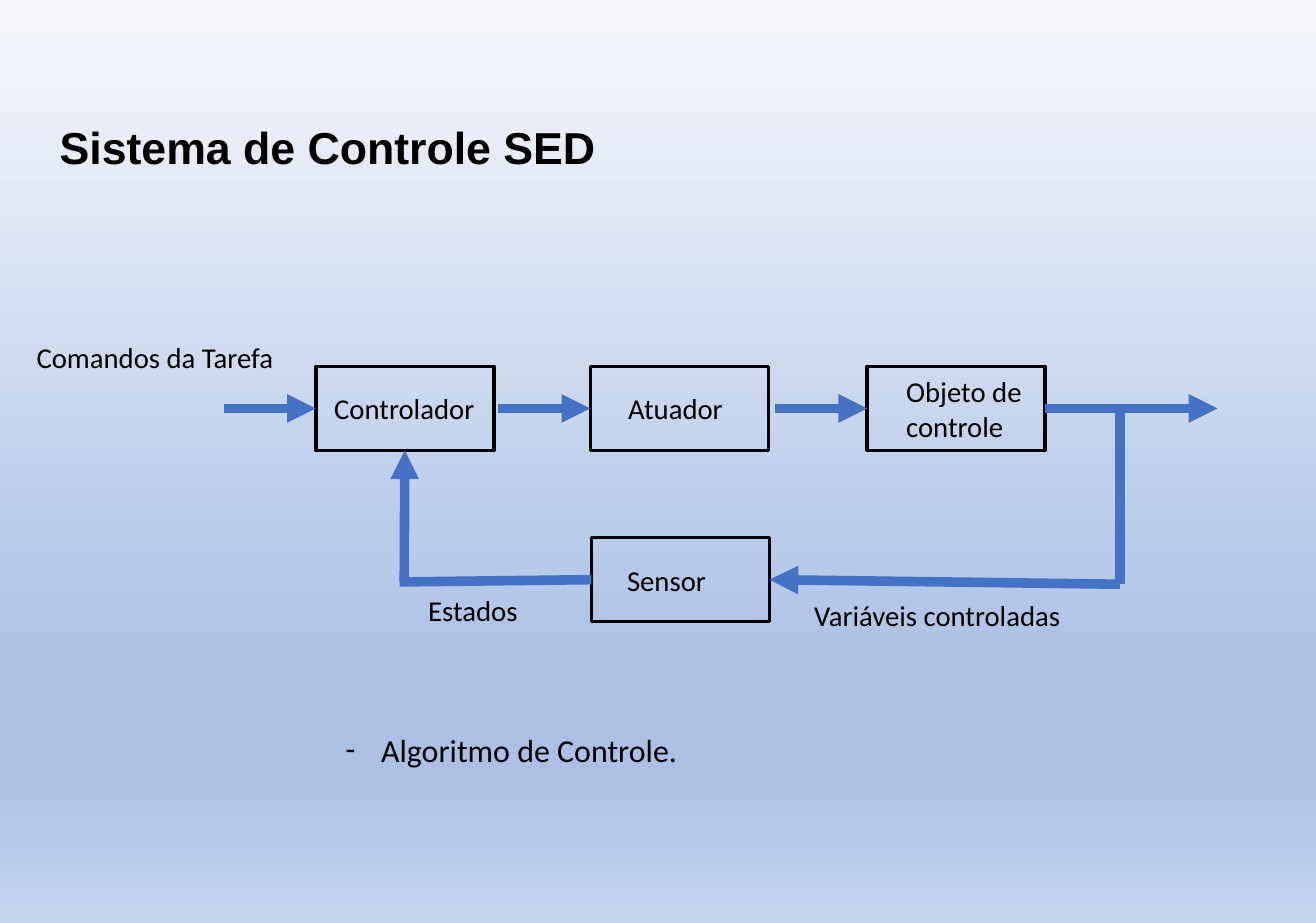
from lxml.etree import SubElement
from pptx import Presentation
from pptx.dml.color import RGBColor
from pptx.enum.shapes import MSO_CONNECTOR as Connector, MSO_SHAPE as Shape
from pptx.enum.text import MSO_ANCHOR as Anchor, MSO_AUTO_SIZE as AutoSize, PP_ALIGN as Align
from pptx.oxml.ns import qn
from pptx.util import Inches, Pt

COLORS = {"ink": "000000", "arrow": "4472C4", "sky_top": "F6F8FC",
          "sky_deep": "ABC0E4", "sky_base": "C7D5ED"}
SKY_STOPS = [(0, "sky_top"), (74, "sky_deep"), (83, "sky_deep"), (100, "sky_base")]
TOP, LEFT, BOTTOM, RIGHT = range(4)
UNITS_PER_INCH = 576
BLOCK_WIDTH, BLOCK_HEIGHT = 1.55, 0.73


def rgb(name):
    """Return the palette colour with this name."""
    return RGBColor.from_string(COLORS[name])


def write(shape, text, size=18, font="Calibri", bold=False, anchor=Anchor.TOP, inset=0.1):
    """Write left-aligned text, one paragraph per line, into a shape."""
    frame = shape.text_frame
    frame.text = text
    frame.word_wrap = True
    frame.auto_size = AutoSize.NONE
    frame.vertical_anchor = anchor
    frame.margin_left = Inches(inset)
    frame.margin_right = 0
    for paragraph in frame.paragraphs:
        paragraph.alignment = Align.LEFT
        style = paragraph.runs[0].font
        style.size, style.name, style.bold = Pt(size), font, bold
        style.color.rgb = rgb("ink")


def add_label(slide, text, box, **style):
    """Add a free text label in the given box."""
    label = slide.shapes.add_textbox(*map(Inches, box))
    write(label, text, **style)
    return label


def add_block(slide, text, left, top, inset):
    """Add one outlined block of the control loop."""
    block = slide.shapes.add_shape(Shape.RECTANGLE, *map(
        Inches, (left, top, BLOCK_WIDTH, BLOCK_HEIGHT)))
    block.shadow.inherit = False
    block.fill.background()
    block.line.color.rgb = rgb("ink")
    block.line.width = Pt(2.25)
    write(block, text, anchor=Anchor.MIDDLE, inset=inset)
    return block


def add_signal(slide, start, end, source=None, target=None, arrow=True):
    """Draw a signal line, joined to (block, side) pairs where given."""
    signal = slide.shapes.add_connector(Connector.STRAIGHT, *map(Inches, start + end))
    if source:
        signal.begin_connect(*source)
    if target:
        signal.end_connect(*target)
    signal.line.color.rgb = rgb("arrow")
    signal.line.width = Pt(6)
    if arrow:
        SubElement(signal.line._get_or_add_ln(), qn("a:tailEnd"), type="triangle")
    SubElement(signal._element.spPr, qn("a:effectLst"))


def paint_background(slide):
    """Fill the background with a vertical gradient."""
    fill = slide.background.fill
    fill.gradient()
    fill.gradient_angle = 270
    stops = slide.element.find(f".//{qn('a:gsLst')}")
    for stop in list(stops):
        stops.remove(stop)
    for percent, name in SKY_STOPS:
        stop = SubElement(stops, qn("a:gs"), pos=str(percent * 1000))
        SubElement(stop, qn("a:srgbClr"), val=COLORS[name])


def add_title(slide, box):
    """Place and format the slide title."""
    title = slide.shapes.title
    title.left, title.top, title.width, title.height = map(Inches, box)
    write(title, "Sistema de Controle SED", size=28, font="Arial", bold=True,
          anchor=Anchor.MIDDLE)


def add_control_loop(slide, box):
    """Draw the blocks, signals and signal names of the loop inside the box."""
    x, y, width, height = box
    row, feedback = y + 0.28, y + height - BLOCK_HEIGHT
    forward, back = row + BLOCK_HEIGHT / 2, feedback + BLOCK_HEIGHT / 2
    stages = [add_block(slide, text, x + dx, row, inset) for text, dx, inset in (
        ("Controlador", 2.53, 0.16),
        ("Atuador", 4.92, 0.33),
        ("Objeto de\ncontrole", 7.33, 0.34))]
    controller, _, plant = stages
    sensor = add_block(slide, "Sensor", x + 4.93, feedback, 0.31)

    for stage in stages:
        entry = stage.left / Inches(1)
        add_signal(slide, (entry - 0.8, forward), (entry, forward), target=(stage, LEFT))
    output = (x + width, forward)
    add_signal(slide, output, output, source=(plant, RIGHT))

    branch, corner = x + 9.53, x + 3.3
    turn = (branch, back + 0.04)
    add_signal(slide, turn, (branch, forward), arrow=False)
    add_signal(slide, turn, turn, target=(sensor, RIGHT))
    add_signal(slide, (corner, back), (corner - 0.04, back + 0.02),
               source=(sensor, LEFT), arrow=False)
    add_signal(slide, (corner, back + 0.02), (corner, row), target=(controller, BOTTOM))

    for name, dx, dy, span in (("Comandos da Tarefa", 0, 0, 2.81),
                               ("Estados", 3.41, 2.2, 4.59),
                               ("Variáveis controladas", 6.77, 2.24, 4.45)):
        add_label(slide, name, (x + dx, y + dy, span, 0.4))


def add_note(slide, box):
    """Add the dashed note below the loop."""
    note = add_label(slide, "Algoritmo de Controle.", box, size=20)
    properties = note.text_frame.paragraphs[0]._p.get_or_add_pPr()
    properties.set("marL", str(Inches(0.31)))
    properties.set("indent", str(Inches(-0.31)))
    SubElement(properties, qn("a:buFont"), typeface="Calibri")
    SubElement(properties, qn("a:buChar"), char="-")


def main():
    """Build and save the slide."""
    deck = Presentation()
    deck.slide_width = Inches(6600 / UNITS_PER_INCH)
    deck.slide_height = Inches(4627 / UNITS_PER_INCH)
    slide = deck.slides.add_slide(deck.slide_layouts[5])
    paint_background(slide)
    add_title(slide, (0.42, 0.99, 10.37, 0.57))
    add_control_loop(slide, (0.22, 2.91, 10.38, 2.5))
    add_note(slide, (2.91, 6.31, 6.19, 0.77))
    deck.save("out.pptx")


if __name__ == "__main__":
    main()
